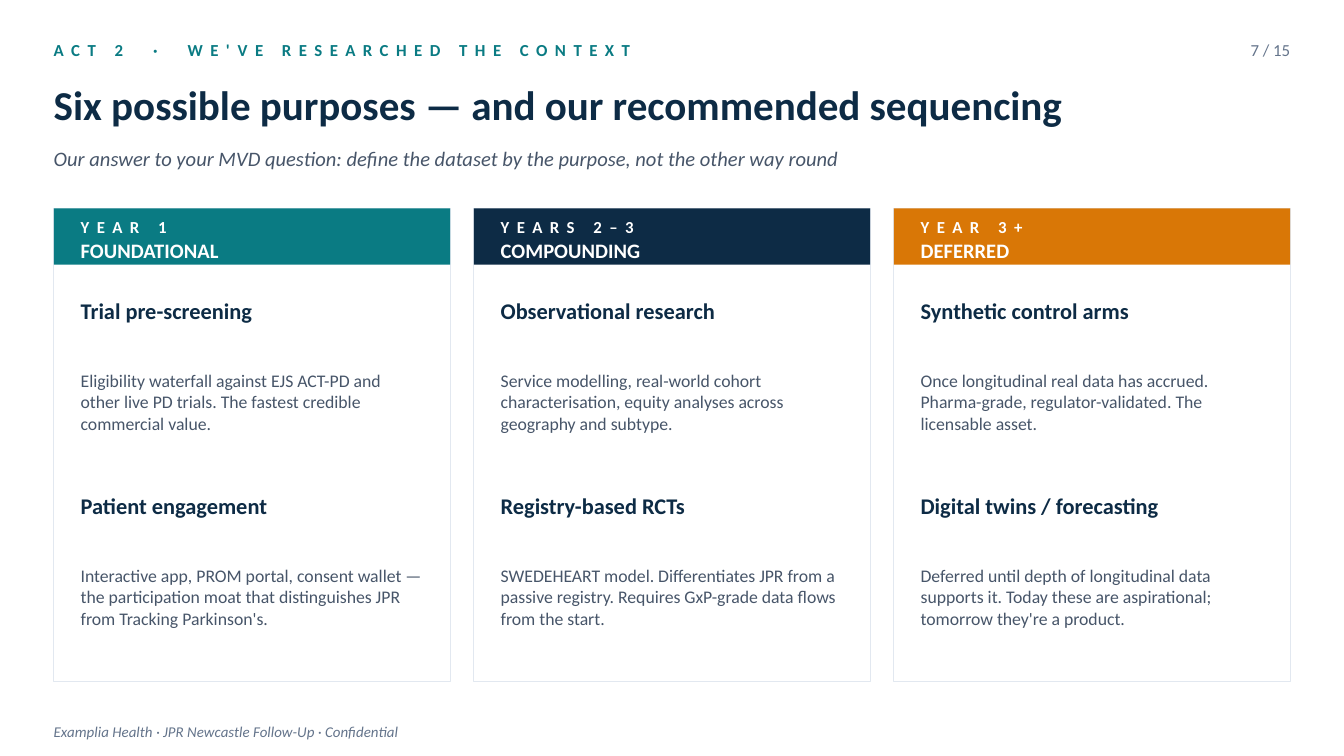
from pptx import Presentation
from pptx.dml.color import RGBColor
from pptx.enum.shapes import MSO_SHAPE as Shape
from pptx.enum.text import MSO_ANCHOR as Anchor, PP_ALIGN as Align
from pptx.util import Pt

TEAL = RGBColor(0x0A, 0x7B, 0x83)
NAVY = RGBColor(0x0D, 0x2B, 0x45)
ORANGE = RGBColor(0xD9, 0x77, 0x06)
WHITE = RGBColor(0xFF, 0xFF, 0xFF)
BORDER = RGBColor(0xE2, 0xE8, 0xF0)
SLATE = RGBColor(0x47, 0x55, 0x69)
GREY = RGBColor(0x64, 0x74, 0x8B)

FONT = "Calibri"
MARGIN = 28.8
CONTENT_WIDTH = 662.4
CARD_TOP = 111.6
CARD_WIDTH = 212.4
CARD_HEIGHT = 253.4
CARD_PITCH = (CONTENT_WIDTH - CARD_WIDTH) / 2
HEADER_HEIGHT = 30.24
PADDING = 14.4
PURPOSE_TOP = 154.8
PURPOSE_PITCH = 104.4

PHASES = [
    ("YEAR 1", "FOUNDATIONAL", TEAL, [
        ("Trial pre-screening",
         "Eligibility waterfall against EJS ACT-PD and other live PD trials. "
         "The fastest credible commercial value."),
        ("Patient engagement",
         "Interactive app, PROM portal, consent wallet — the participation moat "
         "that distinguishes JPR from Tracking Parkinson's."),
    ]),
    ("YEARS 2–3", "COMPOUNDING", NAVY, [
        ("Observational research",
         "Service modelling, real-world cohort characterisation, "
         "equity analyses across geography and subtype."),
        ("Registry-based RCTs",
         "SWEDEHEART model. Differentiates JPR from a passive registry. "
         "Requires GxP-grade data flows from the start."),
    ]),
    ("YEAR 3+", "DEFERRED", ORANGE, [
        ("Synthetic control arms",
         "Once longitudinal real data has accrued. Pharma-grade, "
         "regulator-validated. The licensable asset."),
        ("Digital twins / forecasting",
         "Deferred until depth of longitudinal data supports it. "
         "Today these are aspirational; tomorrow they're a product."),
    ]),
]


def add_text(slide, text, left, top, width, height, *, size, color,
             bold=False, italic=False, spacing=0, align=Align.LEFT):
    box = slide.shapes.add_textbox(Pt(left), Pt(top), Pt(width), Pt(height))
    frame = box.text_frame
    frame.word_wrap = True
    frame.vertical_anchor = Anchor.MIDDLE
    frame.margin_left = frame.margin_right = 0
    frame.margin_top = frame.margin_bottom = 0
    paragraph = frame.paragraphs[0]
    paragraph.alignment = align
    run = paragraph.add_run()
    run.text = text
    font = run.font
    font.name = FONT
    font.size = Pt(size)
    font.bold = bold
    font.italic = italic
    font.color.rgb = color
    if spacing:
        run._r.get_or_add_rPr().set("spc", str(spacing * 100))


def add_rectangle(slide, left, top, width, height, fill, line=None):
    shape = slide.shapes.add_shape(
        Shape.RECTANGLE, Pt(left), Pt(top), Pt(width), Pt(height))
    shape.shadow.inherit = False
    shape.fill.solid()
    shape.fill.fore_color.rgb = fill
    if line is None:
        shape.line.fill.background()
    else:
        shape.line.color.rgb = line
        shape.line.width = Pt(0.5)


def add_phase_card(slide, left, period, name, color, purposes):
    add_rectangle(slide, left, CARD_TOP, CARD_WIDTH, CARD_HEIGHT, WHITE, BORDER)
    add_rectangle(slide, left, CARD_TOP, CARD_WIDTH, HEADER_HEIGHT, color)
    text_left = left + PADDING
    text_width = CARD_WIDTH - 2 * PADDING
    add_text(slide, period, text_left, 115.2, text_width, 13,
             size=9, color=WHITE, bold=True, spacing=4)
    add_text(slide, name, text_left, 127.4, text_width, 13,
             size=11, color=WHITE, bold=True)
    for index, (title, description) in enumerate(purposes):
        top = PURPOSE_TOP + index * PURPOSE_PITCH
        add_text(slide, title, text_left, top, text_width, 23,
                 size=12, color=NAVY, bold=True)
        add_text(slide, description, text_left, top + 24.5, text_width, 72,
                 size=9.5, color=SLATE)


def add_heading(slide):
    add_text(slide, "ACT 2  ·  WE'VE RESEARCHED THE CONTEXT",
             MARGIN, 15.84, 432, 21.6, size=9, color=TEAL, bold=True, spacing=4)
    add_text(slide, "7 / 15", 655.2, 15.84, 36, 21.6,
             size=9, color=GREY, align=Align.RIGHT)
    add_text(slide, "Six possible purposes — and our recommended sequencing",
             MARGIN, 36, CONTENT_WIDTH, 39.6, size=22, color=NAVY, bold=True)
    add_text(slide, "Our answer to your MVD question: define the dataset by the "
             "purpose, not the other way round",
             MARGIN, 73.44, CONTENT_WIDTH, 23, size=11, color=SLATE, italic=True)


def main():
    presentation = Presentation()
    presentation.slide_width = Pt(720)
    presentation.slide_height = Pt(405)
    slide = presentation.slides.add_slide(presentation.slide_layouts[6])
    slide.background.fill.solid()
    slide.background.fill.fore_color.rgb = WHITE
    add_heading(slide)
    for index, phase in enumerate(PHASES):
        add_phase_card(slide, MARGIN + index * CARD_PITCH, *phase)
    add_text(slide, "Examplia Health · JPR Newcastle Follow-Up · Confidential",
             MARGIN, 383.76, CONTENT_WIDTH, 15.84, size=8, color=GREY, italic=True)
    presentation.save("out.pptx")


if __name__ == "__main__":
    main()
